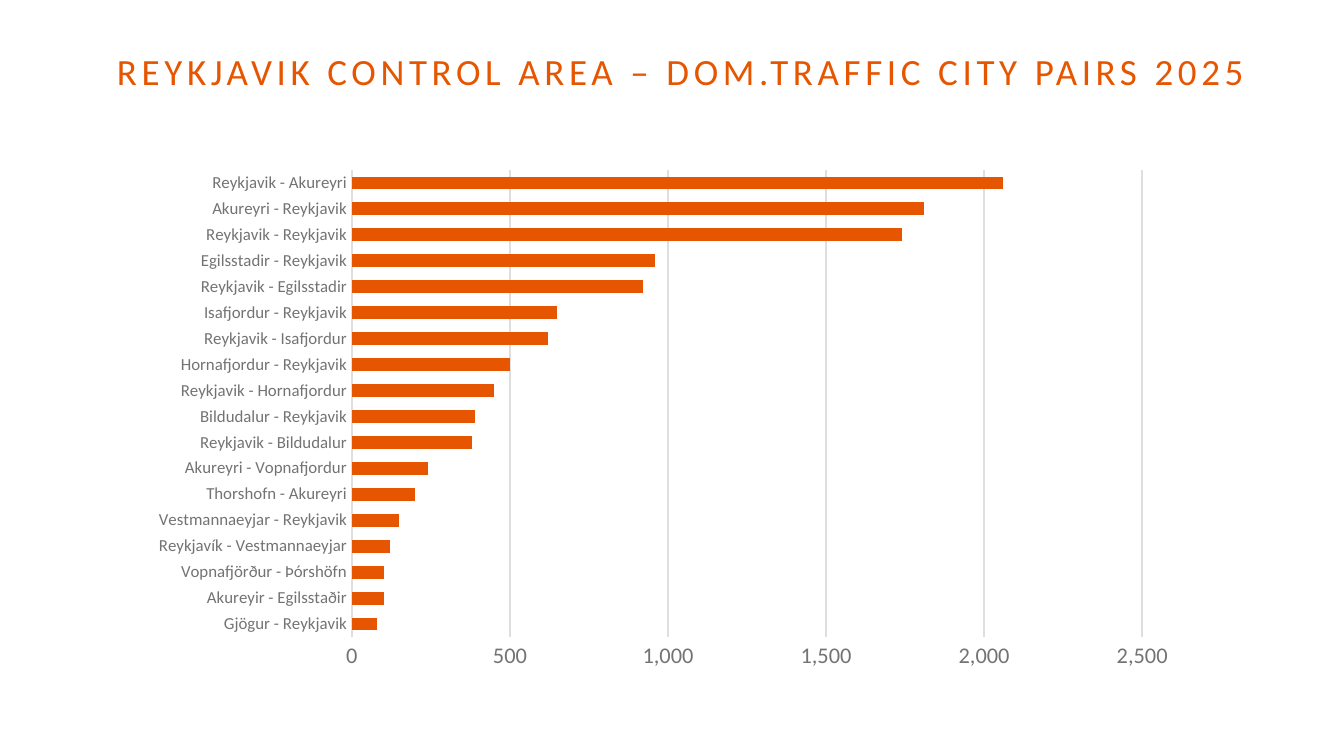
import pptx
import pptx.chart.data
import pptx.dml.color
import pptx.enum.chart
import pptx.enum.text
import pptx.oxml
import pptx.oxml.ns
import pptx.util

SCALE = 914400 / 134.4  # EMU per px
ORANGE, GRAY, GRID = "E65500", "737373", "DFDFDF"


def px(n):
    return pptx.util.Emu(round(n * SCALE))


def rgb(value):
    return pptx.dml.color.RGBColor.from_string(value)


prs = pptx.Presentation()
prs.slide_width, prs.slide_height = px(1344), px(756)
s = prs.slides.add_slide(prs.slide_layouts[6])
s.background.fill.solid()
s.background.fill.fore_color.rgb = rgb("FFFFFF")

# Title
tf = s.shapes.add_textbox(px(117), px(24), px(1158), px(90)).text_frame
frame_format = {
    "word_wrap": True,
    "vertical_anchor": pptx.enum.text.MSO_ANCHOR.MIDDLE,
    "margin_left": 0, "margin_right": 0, "margin_top": 0, "margin_bottom": 0,
}
for name, value in frame_format.items():
    setattr(tf, name, value)
p = tf.paragraphs[0]
p.line_spacing = pptx.util.Pt(26)
r = p.add_run()
r.text = "REYKJAVIK CONTROL AREA – DOM.TRAFFIC CITY PAIRS 2025"
for name, value in {"name": "Calibri", "size": pptx.util.Pt(19.8)}.items():
    setattr(r.font, name, value)
r.font.color.rgb = rgb(ORANGE)
r.font._element.set("spc", "250")

# Chart data, from the bottom bar to the top bar
city_pairs = [
    ("Gjögur - Reykjavik", 80),
    ("Akureyir - Egilsstaðir", 100),
    ("Vopnafjörður - Þórshöfn", 100),
    ("Reykjavík - Vestmannaeyjar", 120),
    ("Vestmannaeyjar - Reykjavik", 150),
    ("Thorshofn - Akureyri", 200),
    ("Akureyri - Vopnafjordur", 240),
    ("Reykjavik - Bildudalur", 380),
    ("Bildudalur - Reykjavik", 390),
    ("Reykjavik - Hornafjordur", 450),
    ("Hornafjordur - Reykjavik", 500),
    ("Reykjavik - Isafjordur", 620),
    ("Isafjordur - Reykjavik", 650),
    ("Reykjavik - Egilsstadir", 920),
    ("Egilsstadir - Reykjavik", 960),
    ("Reykjavik - Reykjavik", 1740),
    ("Akureyri - Reykjavik", 1810),
    ("Reykjavik - Akureyri", 2060),
]
data = pptx.chart.data.CategoryChartData(number_format="#,##0")
data.categories = [pair for pair, flights in city_pairs]
data.add_series("Series 1", [flights for pair, flights in city_pairs])

# Bar chart
chart = s.shapes.add_chart(
    pptx.enum.chart.XL_CHART_TYPE.BAR_CLUSTERED,
    px(117), px(159), px(1068), px(556), data).chart
chart.has_title = chart.has_legend = False
chart.font.name, chart.font.size = "Calibri", pptx.util.Pt(10)
chart.font.color.rgb = rgb("272727")
plot = chart.plots[0]
for name, value in {"gap_width": 100, "overlap": -12, "vary_by_categories": False}.items():
    setattr(plot, name, value)
fill = plot.series[0].format.fill
fill.solid()
fill.fore_color.rgb = rgb(ORANGE)

# Axes
cat, val = chart.category_axis, chart.value_axis
for axis, size in ((cat, 9), (val, 12)):
    axis.major_tick_mark = axis.minor_tick_mark = pptx.enum.chart.XL_TICK_MARK.NONE
    font = axis.tick_labels.font
    font.name, font.size = "Calibri", pptx.util.Pt(size)
    font.color.rgb = rgb(GRAY)
cat.has_major_gridlines = False
val_format = {"minimum_scale": 0, "maximum_scale": 2500, "major_unit": 500,
              "has_major_gridlines": True}
for name, value in val_format.items():
    setattr(val, name, value)
val.tick_labels.number_format = "#,##0"
val.tick_labels.number_format_is_linked = False
val.format.line.fill.background()
for line in (cat.format.line, val.major_gridlines.format.line):
    line.color.rgb = rgb(GRID)
    line.width = pptx.util.Pt(0.75)

# Inner plot area, as shares of the chart
box = {"x": 0.22, "y": 0.02, "w": 0.74, "h": 0.84}
modes = "".join(f'<c:{k}Mode val="edge"/>' for k in "xy")
sizes = "".join(f'<c:{k} val="{v}"/>' for k, v in box.items())
layout = pptx.oxml.parse_xml(
    f'<c:layout {pptx.oxml.ns.nsdecls("c")}><c:manualLayout>'
    f'<c:layoutTarget val="inner"/>{modes}{sizes}</c:manualLayout></c:layout>')
area = chart._chartSpace.chart.plotArea
for old in area.findall(pptx.oxml.ns.qn("c:layout")):
    area.remove(old)
area.insert(0, layout)

prs.save("out.pptx")
